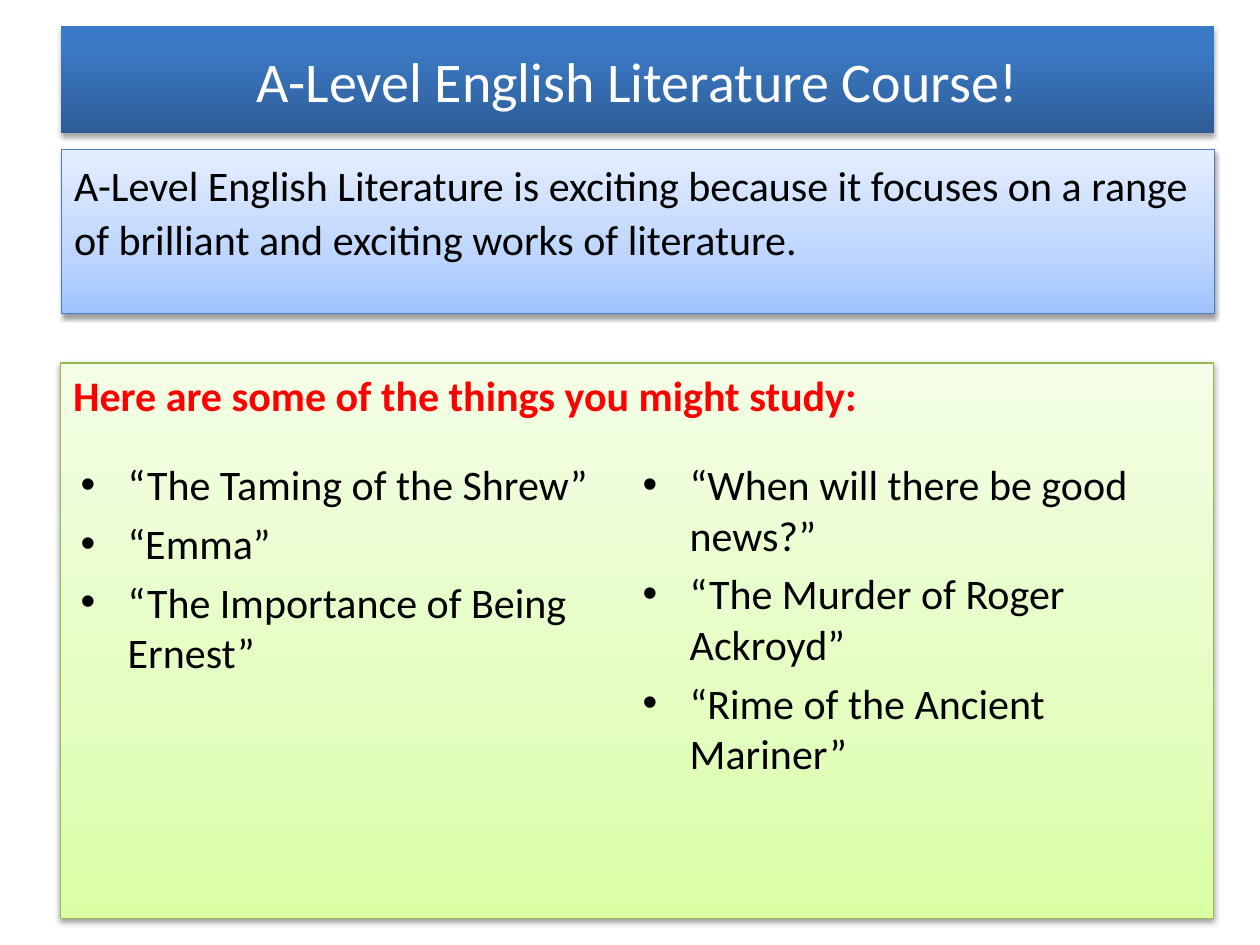
from lxml import etree
from pptx import Presentation
from pptx.dml.color import RGBColor
from pptx.enum import text
from pptx.oxml import parse_xml
from pptx.oxml.ns import nsdecls, qn
from pptx.util import Cm, Pt

WHITE = RGBColor(0xFF, 0xFF, 0xFF)
BLACK = RGBColor(0, 0, 0)
RED = RGBColor(0xFF, 0, 0)
BLUE_LINE = RGBColor(0x4A, 0x7D, 0xBA)
GREEN_LINE = RGBColor(0x97, 0xB8, 0x53)
# Gradient stops run from the bottom edge to the top: percent, colour
DARK_BLUE = [(0, RGBColor(0x2D, 0x5C, 0x97)), (80, RGBColor(0x3C, 0x7A, 0xC5)),
             (100, RGBColor(0x39, 0x7B, 0xC9))]
PALE_BLUE = [(0, RGBColor(0x9F, 0xC3, 0xFF)), (35, RGBColor(0xBD, 0xD5, 0xFF)),
             (100, RGBColor(0xE4, 0xEE, 0xFF))]
PALE_GREEN = [(0, RGBColor(0xDA, 0xFE, 0xA4)), (35, RGBColor(0xE3, 0xFE, 0xBF)),
              (100, RGBColor(0xF4, 0xFE, 0xE6))]


def write(holder, lines, size=24, color=BLACK, bold=False, spacing=1.0,
          bullet=False, align=text.PP_ALIGN.LEFT, anchor=text.MSO_ANCHOR.TOP):
    frame = holder.text_frame
    frame.text = "\n".join(lines)
    frame.word_wrap = True
    frame.auto_size = text.MSO_AUTO_SIZE.NONE
    frame.vertical_anchor = anchor
    for number, line in enumerate(frame.paragraphs):
        line.alignment = align
        line.line_spacing = spacing
        line.space_before = Pt(4.8 if number else 0)
        font = line.runs[0].font
        font.name, font.size, font.bold = "Calibri", Pt(size), bold
        font.color.rgb = color
        if bullet:
            props = line._p.get_or_add_pPr()
            props.set("marL", str(Cm(0.95)))
            props.set("indent", str(-Cm(0.95)))
            etree.SubElement(props, qn("a:buFont")).set("typeface", "Arial")
            etree.SubElement(props, qn("a:buChar")).set("char", "•")


def make_panel(holder, stops, line_color=None, distance=1.6, opacity=38):
    """Give a placeholder a vertical gradient, an outline and a soft shadow."""
    gradient = "".join(
        f'<a:gs pos="{pos * 1000}"><a:srgbClr val="{color}"/></a:gs>'
        for pos, color in stops)
    props = holder._element.spPr
    props.append(parse_xml(
        f'<a:gradFill {nsdecls("a")} rotWithShape="1"><a:gsLst>{gradient}</a:gsLst>'
        '<a:lin ang="16200000" scaled="0"/></a:gradFill>'))
    if line_color is None:
        holder.line.fill.background()
    else:
        holder.line.color.rgb = line_color
        holder.line.width = Pt(0.75)
    props.append(parse_xml(
        f'<a:effectLst {nsdecls("a")}><a:outerShdw blurRad="{Pt(3.1)}" '
        f'dist="{Pt(distance)}" dir="5400000" rotWithShape="0">'
        f'<a:srgbClr val="000000"><a:alpha val="{opacity * 1000}"/></a:srgbClr>'
        '</a:outerShdw></a:effectLst>'))


prs = Presentation()
prs.slide_width, prs.slide_height = Cm(25.4), Cm(19.05)
slide = prs.slides.add_slide(prs.slide_layouts.get_by_name("Comparison"))
title, study, left_list, intro, right_list = slide.placeholders

for holder, box in [
    (title, (1.23, 0.53, 23.24, 2.16)),
    (study, (1.22, 7.32, 23.24, 11.2)),
    (intro, (1.24, 3.02, 23.24, 3.3)),
    (left_list, (1.37, 9.12, 11, 8.79)),
    (right_list, (12.7, 9.12, 11.76, 8.79)),
]:
    holder.left, holder.top, holder.width, holder.height = map(Cm, box)

make_panel(title, DARK_BLUE, distance=1.8, opacity=35)
make_panel(study, PALE_GREEN, GREEN_LINE)
make_panel(intro, PALE_BLUE, BLUE_LINE)

write(title, ["A-Level English Literature Course!"], size=32, color=WHITE,
      align=text.PP_ALIGN.CENTER, anchor=text.MSO_ANCHOR.MIDDLE)
write(study, ["Here are some of the things you might study:"], color=RED, bold=True)
write(intro, ["A-Level English Literature is exciting because it focuses on a range "
              "of brilliant and exciting works of literature."], spacing=1.07)
write(left_list, ["“The Taming of the Shrew”", "“Emma”",
                  "“The Importance of Being Ernest”"], bullet=True)
write(right_list, ["“When will there be good news?”", "“The Murder of Roger Ackroyd”",
                   "“Rime of the Ancient Mariner”"], bullet=True)

prs.save("out.pptx")
